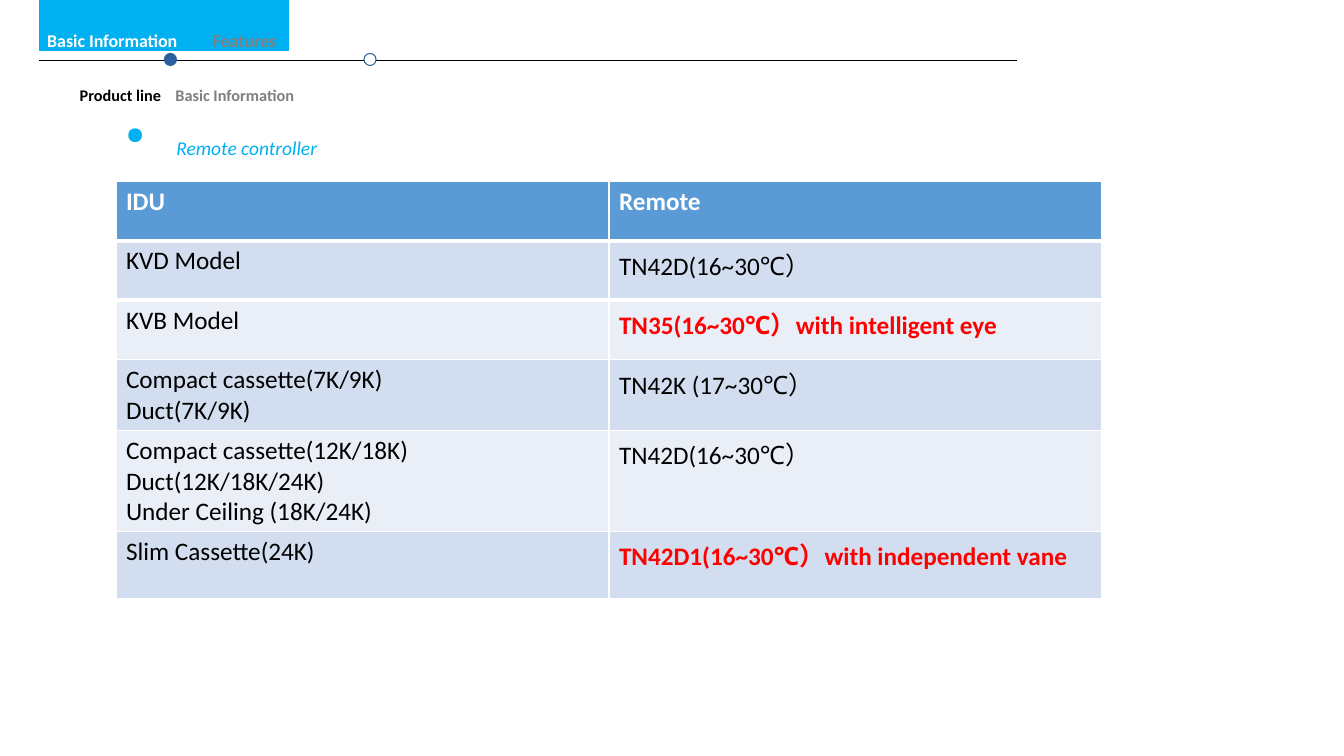
from typing import NamedTuple

import lxml.etree
import pptx
import pptx.dml.color
import pptx.enum.shapes
import pptx.enum.text
import pptx.oxml.ns
import pptx.util

Inches = pptx.util.Inches
RGBColor = pptx.dml.color.RGBColor
Shapes = pptx.enum.shapes.MSO_SHAPE

BLACK = RGBColor(0x00, 0x00, 0x00)
WHITE = RGBColor(0xFF, 0xFF, 0xFF)
RED = RGBColor(0xFF, 0x00, 0x00)
CYAN = RGBColor(0x00, 0xB0, 0xF0)
NAVY = RGBColor(0x29, 0x60, 0x9D)
GRAY = RGBColor(0x80, 0x80, 0x80)
DARK_GRAY = RGBColor(0x7F, 0x7F, 0x7F)
HEADER_BLUE = RGBColor(0x5B, 0x9B, 0xD5)
BANDS = (RGBColor(0xD2, 0xDE, 0xEF), RGBColor(0xEA, 0xEF, 0xF7))
FONT = "Calibri"


class Marker(NamedTuple):
    kind: Shapes
    left: float
    top: float
    width: float
    height: float
    fill: RGBColor
    line: RGBColor


class Segment(NamedTuple):
    text: str
    color: RGBColor


class Label(NamedTuple):
    left: float
    top: float
    width: float
    height: float
    size: int
    segments: tuple[Segment, ...]
    inset: float = 0.1
    tab: float = 0
    bullet: str = ""
    wrap: bool = True
    grow: bool = True


class Row(NamedTuple):
    height: float
    unit: str
    remote: str
    highlight: bool = False


TAB_BLOCK = Marker(Shapes.FLOWCHART_PROCESS, 0.39, 0, 2.47, 0.5, CYAN, CYAN)
DOTS = (
    Marker(Shapes.OVAL, 1.63, 0.53, 0.12, 0.12, NAVY, NAVY),
    Marker(Shapes.OVAL, 3.61, 0.53, 0.12, 0.12, WHITE, NAVY),
)
BREADCRUMB = Label(
    0.5, 0.61, 8.27, 0.44, 20,
    (Segment("Product line", BLACK), Segment("Basic Information", DARK_GRAY)),
    inset=0.29, tab=0.95,
)
NAVIGATION = Label(
    0.37, 0.04, 9.71, 0.48, 22,
    (Segment("Basic Information", WHITE), Segment("Features", GRAY)),
    tab=1.64, grow=False,
)
HEADING = Label(
    1.15, 1.08, 3.22, 0.5, 24, (Segment("Remote controller", CYAN),),
    bullet="●", wrap=False,
)
ROWS = (
    Row(0.59, "IDU", "Remote"),
    Row(0.59, "KVD Model", "TN42D(16~30℃）"),
    Row(0.59, "KVB Model", "TN35(16~30℃）with intelligent eye", True),
    Row(0.67, "Compact cassette(7K/9K)\nDuct(7K/9K)", "TN42K (17~30℃）"),
    Row(0.96, "Compact cassette(12K/18K)\nDuct(12K/18K/24K)\nUnder Ceiling (18K/24K)",
        "TN42D(16~30℃）"),
    Row(0.67, "Slim Cassette(24K)", "TN42D1(16~30℃）with independent vane", True),
)


def add_marker(slide: pptx.slide.Slide, marker: Marker) -> None:
    shape = slide.shapes.add_shape(
        marker.kind, Inches(marker.left), Inches(marker.top),
        Inches(marker.width), Inches(marker.height),
    )
    shape.shadow.inherit = False
    shape.fill.solid()
    shape.fill.fore_color.rgb = marker.fill
    shape.line.color.rgb = marker.line
    shape.line.width = pptx.util.Pt(0.75)


def add_rule(slide: pptx.slide.Slide) -> None:
    rule = slide.shapes.add_connector(
        pptx.enum.shapes.MSO_CONNECTOR.STRAIGHT,
        Inches(0.39), Inches(0.6), Inches(10.09), Inches(0.6),
    )
    rule.line.color.rgb = BLACK
    rule.line.width = pptx.util.Pt(0.75)
    properties = rule._element.spPr
    lxml.etree.SubElement(properties, pptx.oxml.ns.qn("a:effectLst"))


def add_label(slide: pptx.slide.Slide, label: Label) -> None:
    box = slide.shapes.add_textbox(
        Inches(label.left), Inches(label.top), Inches(label.width), Inches(label.height)
    )
    frame = box.text_frame
    frame.word_wrap = label.wrap
    frame.margin_left = Inches(label.inset)
    if label.grow:
        frame.auto_size = pptx.enum.text.MSO_AUTO_SIZE.SHAPE_TO_FIT_TEXT
    paragraph = frame.paragraphs[0]
    properties = paragraph._p.get_or_add_pPr()
    if label.bullet:
        properties.set("marL", str(Inches(0.5)))
        properties.set("indent", str(Inches(-0.5)))
        bullet_size = lxml.etree.SubElement(properties, pptx.oxml.ns.qn("a:buSzPct"))
        bullet_size.set("val", "70000")
        bullet = lxml.etree.SubElement(properties, pptx.oxml.ns.qn("a:buChar"))
        bullet.set("char", label.bullet)
    if label.tab:
        tabs = lxml.etree.SubElement(properties, pptx.oxml.ns.qn("a:tabLst"))
        tab = lxml.etree.SubElement(tabs, pptx.oxml.ns.qn("a:tab"))
        tab.set("pos", str(Inches(label.tab)))
        tab.set("algn", "l")
    paragraph.font.name = FONT
    paragraph.font.size = pptx.util.Pt(label.size)
    paragraph.font.bold = not label.bullet
    paragraph.font.italic = bool(label.bullet)
    for index, segment in enumerate(label.segments):
        run = paragraph.add_run()
        run.text = "\t" + segment.text if index else segment.text
        run.font.color.rgb = segment.color
        run._r.get_or_add_rPr().set("baseline", "-25000")


def set_border(cell: pptx.table._Cell, side: str, width: float) -> None:
    border = lxml.etree.Element(pptx.oxml.ns.qn(f"a:{side}"))
    border.set("w", str(pptx.util.Pt(width)))
    fill = lxml.etree.SubElement(border, pptx.oxml.ns.qn("a:solidFill"))
    color = lxml.etree.SubElement(fill, pptx.oxml.ns.qn("a:srgbClr"))
    color.set("val", str(WHITE))
    cell._tc.get_or_add_tcPr().insert(0, border)


def fill_cell(cell: pptx.table._Cell, text: str, fill: RGBColor, color: RGBColor, bold: bool) -> None:
    cell.fill.solid()
    cell.fill.fore_color.rgb = fill
    cell.text = text
    for paragraph in cell.text_frame.paragraphs:
        paragraph.font.name = FONT
        paragraph.font.size = pptx.util.Pt(18)
        paragraph.font.bold = bold
        paragraph.font.color.rgb = color


def add_remote_table(slide: pptx.slide.Slide) -> None:
    height = sum(row.height for row in ROWS)
    table = slide.shapes.add_table(
        len(ROWS), 2, Inches(1.15), Inches(1.8), Inches(9.78), Inches(height)
    ).table
    for index, row in enumerate(ROWS):
        table.rows[index].height = Inches(row.height)
        header = index == 0
        fill = HEADER_BLUE if header else BANDS[(index - 1) % 2]
        color = WHITE if header else BLACK
        fill_cell(table.cell(index, 0), row.unit, fill, color, header)
        remote_color = RED if row.highlight else color
        fill_cell(table.cell(index, 1), row.remote, fill, remote_color, header or row.highlight)
    for column in range(2):
        set_border(table.cell(0, column), "lnB", 3)
        set_border(table.cell(1, column), "lnT", 3)


def main() -> None:
    presentation = pptx.Presentation()
    presentation.slide_width = Inches(13.33)
    presentation.slide_height = Inches(7.5)
    slide = presentation.slides.add_slide(presentation.slide_layouts[6])
    add_rule(slide)
    add_marker(slide, TAB_BLOCK)
    add_label(slide, BREADCRUMB)
    for dot in DOTS:
        add_marker(slide, dot)
    add_label(slide, NAVIGATION)
    add_label(slide, HEADING)
    add_remote_table(slide)
    presentation.save("out.pptx")


if __name__ == "__main__":
    main()
